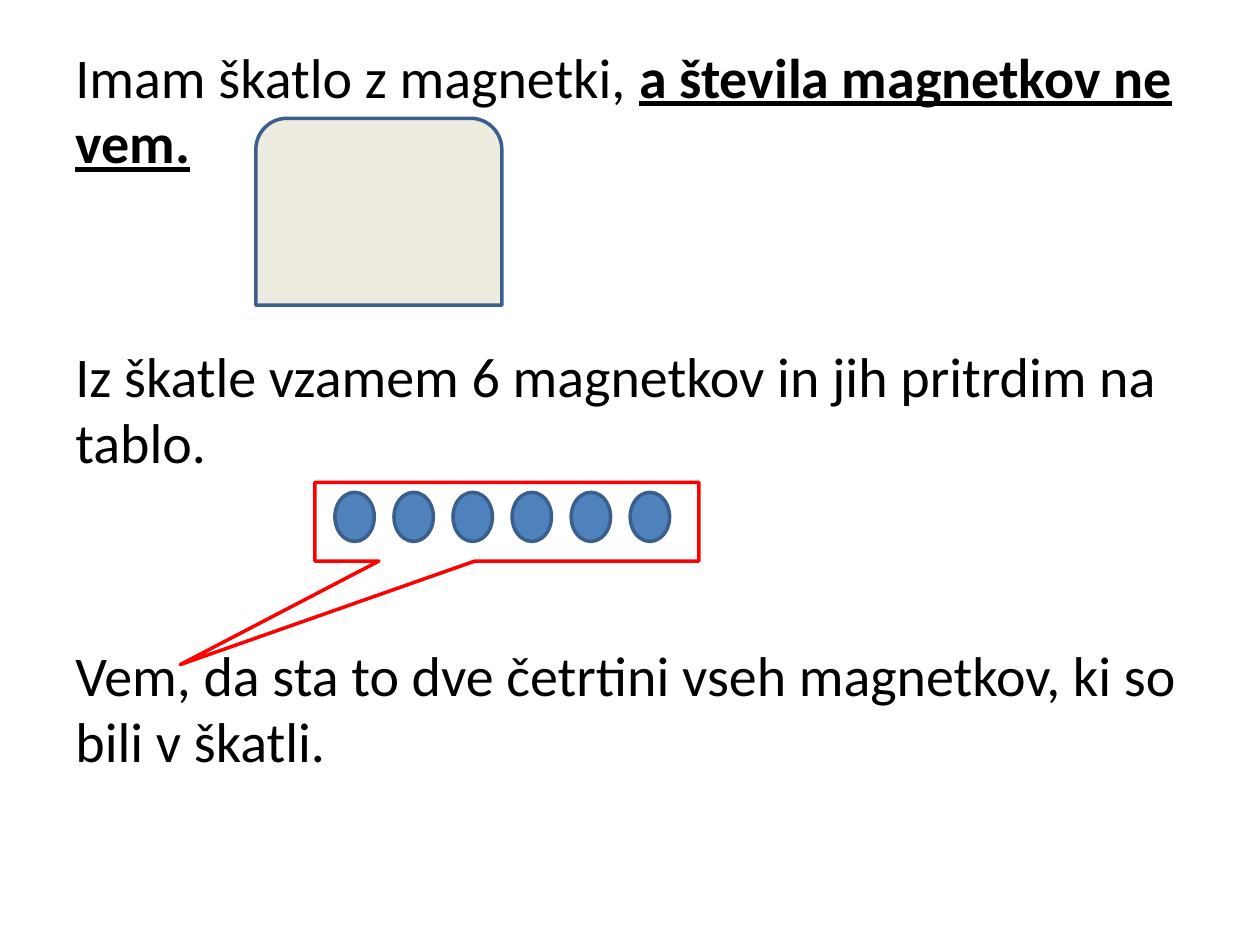
from dataclasses import dataclass

from pptx import Presentation
from pptx import util as u
from pptx.dml.color import RGBColor
from pptx.enum import shapes, text

BLACK = RGBColor(0x00, 0x00, 0x00)
CREAM = RGBColor(0xEE, 0xEC, 0xE1)
BLUE = RGBColor(0x4F, 0x81, 0xBD)
NAVY = RGBColor(0x3A, 0x5F, 0x8C)
RED = RGBColor(0xFF, 0x00, 0x00)

FONT_SIZE = 32
LINE_SPACING = 0.98
DRAWING_GAP = 95.8
MAGNET_COUNT = 6
MAGNET_LEFT = 191.4
MAGNET_PITCH = 33.75


@dataclass
class Figure:
    preset: shapes.MSO_SHAPE
    left: float
    top: float
    width: float
    height: float
    outline: RGBColor
    fill: RGBColor | None = None
    adjustments: tuple[float, ...] = ()


@dataclass
class Sentence:
    plain: str
    stressed: str = ""
    gap: float = 0


def draw_figure(slide, figure: Figure) -> None:
    drawn = slide.shapes.add_shape(
        figure.preset, u.Pt(figure.left), u.Pt(figure.top),
        u.Pt(figure.width), u.Pt(figure.height))
    drawn.shadow.inherit = False
    if figure.fill is None:
        drawn.fill.background()
    else:
        drawn.fill.solid()
        drawn.fill.fore_color.rgb = figure.fill
    drawn.line.color.rgb = figure.outline
    drawn.line.width = u.Pt(2)
    for index, value in enumerate(figure.adjustments):
        drawn.adjustments[index] = value


def write_sentence(paragraph, sentence: Sentence) -> None:
    paragraph.text = sentence.plain
    paragraph.alignment = text.PP_ALIGN.LEFT
    paragraph.line_spacing = LINE_SPACING
    paragraph.space_before = u.Pt(sentence.gap)
    if sentence.stressed:
        stressed = paragraph.add_run()
        stressed.text = sentence.stressed
        stressed.font.bold = True
        stressed.font.underline = True
    for run in paragraph.runs:
        run.font.name = "Calibri"
        run.font.size = u.Pt(FONT_SIZE)
        run.font.color.rgb = BLACK


def write_story(slide, sentences: list[Sentence]) -> None:
    story = slide.shapes.add_textbox(u.Pt(36), u.Pt(22.4), u.Pt(648), u.Pt(460)).text_frame
    story.word_wrap = True
    story.vertical_anchor = text.MSO_ANCHOR.TOP
    for index, sentence in enumerate(sentences):
        paragraph = story.add_paragraph() if index else story.paragraphs[0]
        write_sentence(paragraph, sentence)


def main() -> None:
    presentation = Presentation()
    presentation.slide_width = u.Pt(720)
    presentation.slide_height = u.Pt(540)
    slide = presentation.slides.add_slide(presentation.slide_layouts[6])

    write_story(slide, [
        Sentence("Imam škatlo z magnetki, ", "a števila magnetkov ne vem.", 6.4),
        Sentence("Iz škatle vzamem 6 magnetkov in jih pritrdim na tablo.", gap=DRAWING_GAP),
        Sentence("Vem, da sta to dve četrtini vseh magnetkov, ki so bili v škatli.",
                 gap=DRAWING_GAP),
    ])

    preset = shapes.MSO_SHAPE
    box = Figure(preset.ROUND_2_SAME_RECTANGLE, 146.2, 67.6, 140.6, 106.8, NAVY, CREAM)
    magnets = [
        Figure(preset.FLOWCHART_CONNECTOR, MAGNET_LEFT + index * MAGNET_PITCH, 281.3,
               22.5, 28.1, NAVY, BLUE)
        for index in range(MAGNET_COUNT)
    ]
    callout = Figure(preset.RECTANGULAR_CALLOUT, 180, 275.6, 219.4, 45, RED,
                     adjustments=(-0.851, 1.815))
    for figure in [box, *magnets, callout]:
        draw_figure(slide, figure)

    presentation.save("out.pptx")


if __name__ == "__main__":
    main()
